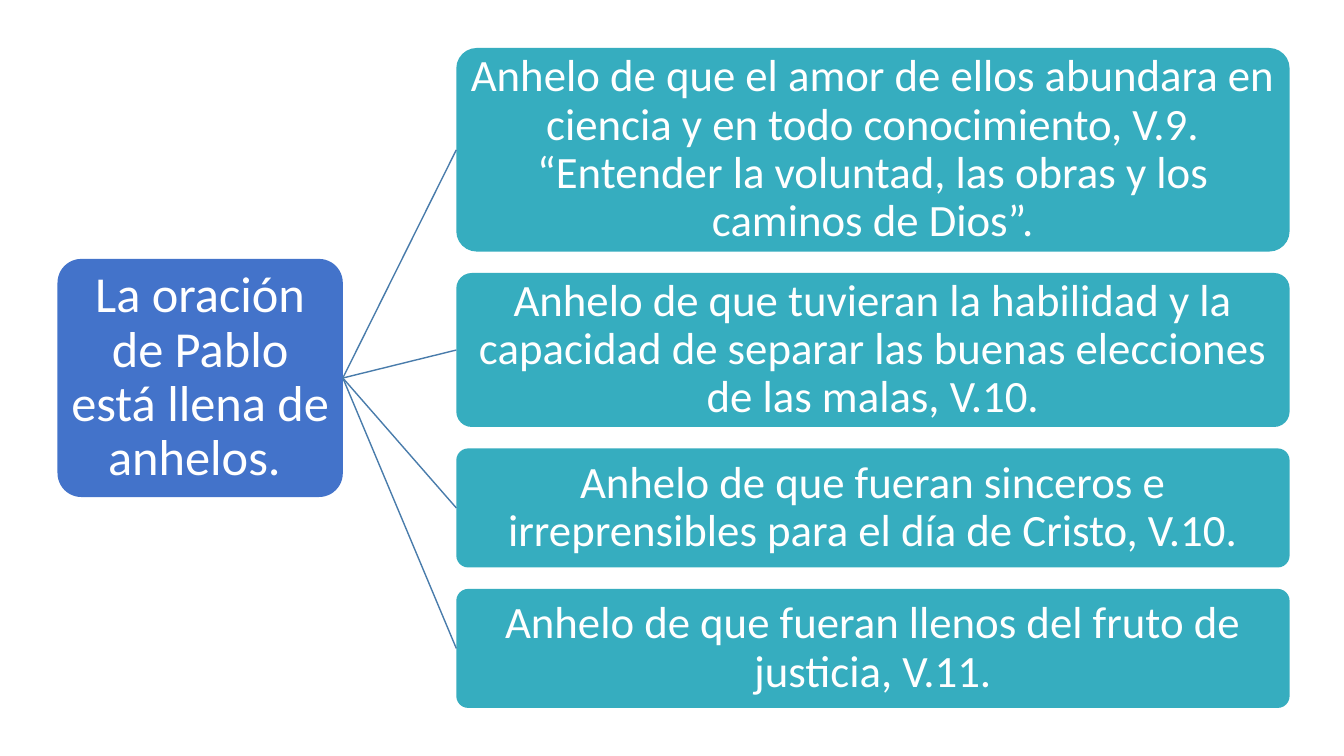
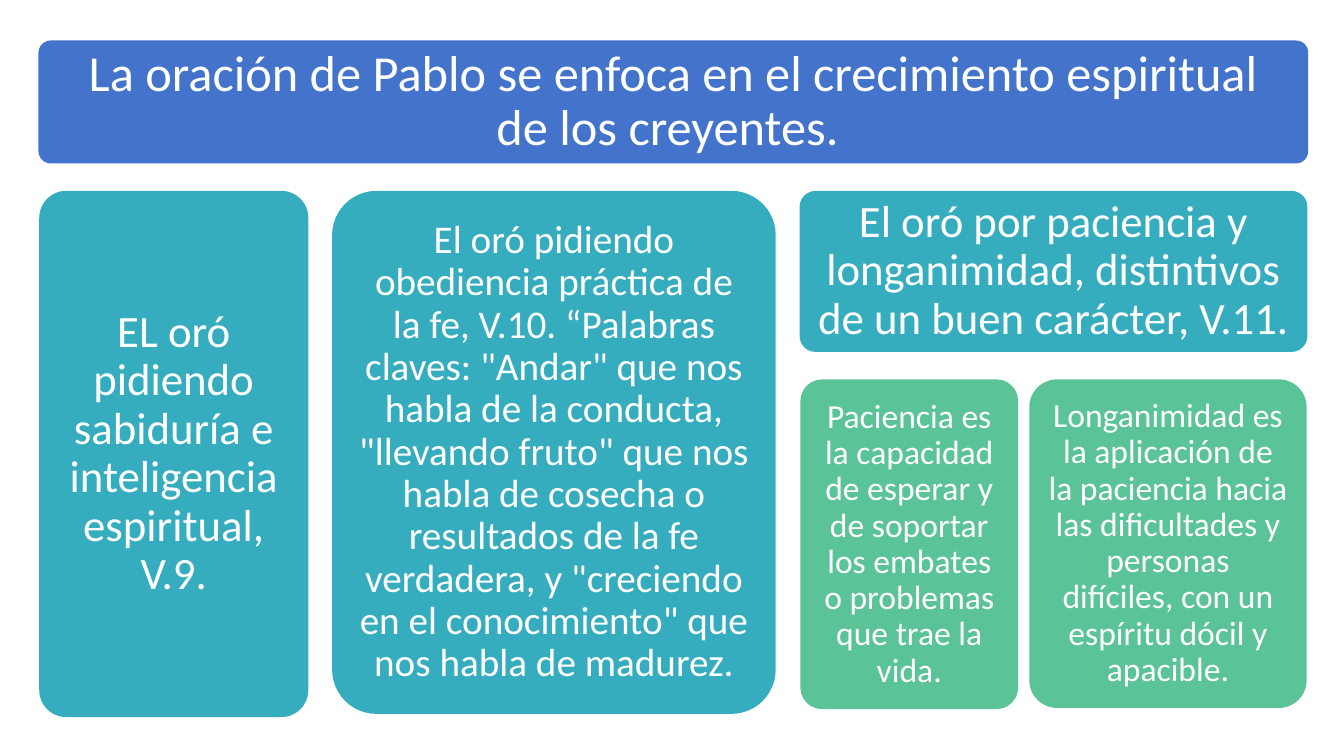
import pptx
import pptx.dml.color
import pptx.enum.shapes
import pptx.enum.text
import pptx.oxml.ns
import pptx.util
from lxml import etree
from pptx.util import Cm

ROOT_BLUE = "4373CA"
TEAL = "36ADBF"
GREEN = "5BC398"
LINK_BLUE = "497CAB"
WHITE = "FFFFFF"
FONT = "Calibri"
SLIDE_WIDTH, SLIDE_HEIGHT = 33.87, 19.05


def color(hex_code):
    return pptx.dml.color.RGBColor.from_string(hex_code)


def add_card(slide, box, fill, text, size, padding):
    """Rounded card; box is in cm, padding is a share of the text size."""
    card = slide.shapes.add_shape(
        pptx.enum.shapes.MSO_SHAPE.ROUNDED_RECTANGLE, *[Cm(length) for length in box]
    )
    card.adjustments[0] = 0.1
    card.shadow.inherit = False
    card.fill.solid()
    card.fill.fore_color.rgb = color(fill)
    card.line.fill.background()
    frame = card.text_frame
    frame.word_wrap = True
    frame.vertical_anchor = pptx.enum.text.MSO_ANCHOR.MIDDLE
    inset = pptx.util.Pt(size * padding)
    frame.margin_left = frame.margin_right = inset
    frame.margin_top = frame.margin_bottom = inset
    frame.text = text
    paragraph = frame.paragraphs[0]
    paragraph.alignment = pptx.enum.text.PP_ALIGN.CENTER
    paragraph.line_spacing = 0.9
    font = paragraph.runs[0].font
    font.name = FONT
    font.size = pptx.util.Pt(size)
    font.color.rgb = color(WHITE)
    return card


deck = pptx.Presentation()
deck.slide_width = Cm(SLIDE_WIDTH)
deck.slide_height = Cm(SLIDE_HEIGHT)
blank = deck.slide_layouts[6]

# Slide 1: one prayer branching into four longings
longings_slide = deck.slides.add_slide(blank)
prayer_height = 6
prayer = add_card(
    longings_slide,
    (1.45, (SLIDE_HEIGHT - prayer_height) / 2, 7.19, prayer_height),
    ROOT_BLUE,
    "La oración de Pablo está llena de anhelos. ",
    36,
    0.05,
)

longings = [
    (5.13, "Anhelo de que el amor de ellos abundara en ciencia y en todo conocimiento, V.9. "
           "“Entender la voluntad, las obras y los caminos de Dios”."),
    (3.88, "Anhelo de que tuvieran la habilidad y la capacidad de separar las buenas "
           "elecciones de las malas, V.10."),
    (3, "Anhelo de que fueran sinceros e irreprensibles para el día de Cristo, V.10."),
    (3, "Anhelo de que fueran llenos del fruto de justicia, V.11."),
]
longing_gap = 0.54
stack_height = sum(height for height, _ in longings) + longing_gap * (len(longings) - 1)
top = (SLIDE_HEIGHT - stack_height) / 2
for height, text in longings:
    longing = add_card(longings_slide, (11.5, top, 21, height), TEAL, text, 32, 0.05)
    link = longings_slide.shapes.add_connector(
        pptx.enum.shapes.MSO_CONNECTOR.STRAIGHT, 0, 0, 0, 0
    )
    link.begin_connect(prayer, 3)
    link.end_connect(longing, 1)
    link.line.color.rgb = color(LINK_BLUE)
    link.line.width = pptx.util.Pt(1)
    etree.SubElement(link._element.spPr, pptx.oxml.ns.qn("a:effectLst"))
    top += height + longing_gap

# Slide 2: the focus of the prayer, its three requests and two definitions
growth_slide = deck.slides.add_slide(blank)
header_top, header_height, row_gap = 1.02, 3.1, 0.69
requests_top = header_top + header_height + row_gap
patience_height = 4.06
definitions_top = requests_top + patience_height + row_gap

add_card(
    growth_slide,
    (0.97, header_top, 32, header_height),
    ROOT_BLUE,
    "La oración de Pablo se enfoca en el crecimiento espiritual de los creyentes. ",
    36,
    0.3,
)

requests = [
    (6.78, 13.26, 32, "EL oró pidiendo sabiduría e inteligencia espiritual, V.9."),
    (11.18, 13.18, 28,
     "El oró pidiendo obediencia práctica de la fe, V.10. “Palabras claves: "
     '"Andar" que nos habla de la conducta, "llevando fruto" que nos habla de '
     'cosecha o resultados de la fe verdadera, y "creciendo en el conocimiento" '
     "que nos habla de madurez."),
    (12.8, patience_height, 32,
     "El oró por paciencia y longanimidad, distintivos de un buen carácter, V.11. "),
]
definitions = [
    (5.49, 8.31, 24,
     "Paciencia es la capacidad de esperar y de soportar los embates o problemas "
     "que trae la vida."),
    (6.99, 8.28, 24,
     "Longanimidad es la aplicación de la paciencia hacia las dificultades y "
     "personas difíciles, con un espíritu dócil y apacible."),
]
rows = [
    (0.99, requests_top, 0.6, TEAL, requests),
    (20.17, definitions_top, 0.28, GREEN, definitions),
]
for left, row_top, gap, fill, cards in rows:
    for width, height, size, text in cards:
        add_card(growth_slide, (left, row_top, width, height), fill, text, size, 0.3)
        left += width + gap

deck.save("out.pptx")
